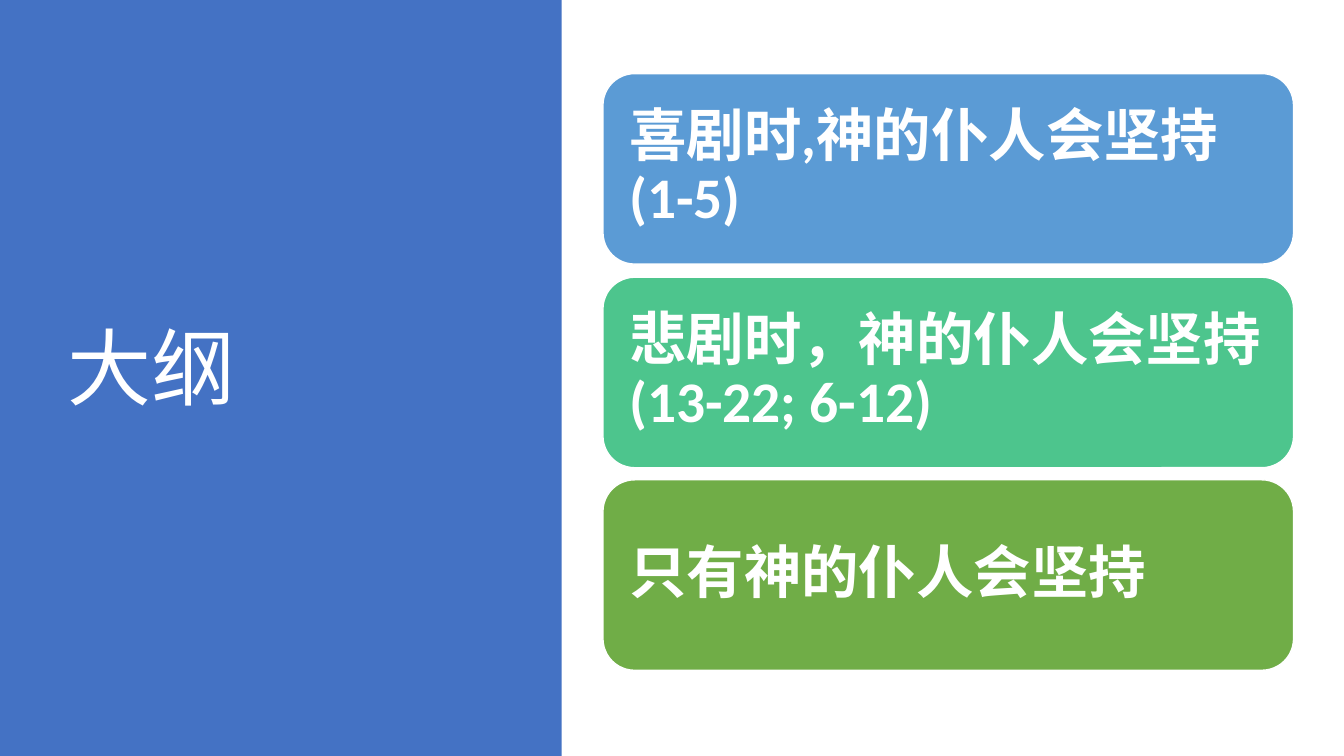
from dataclasses import dataclass

from pptx import Presentation
from pptx import util as u
from pptx.dml.color import RGBColor
from pptx.enum import lang, shapes, text

PX = 9144


@dataclass(frozen=True)
class Theme:
    """Colours, font and type sizes of the slide."""
    font: str = "Calibri"
    white: str = "FFFFFF"
    panel: str = "4472C4"
    cards: tuple = ("5B9BD5", "4DC58D", "70AD47")
    title_size: int = 60
    card_size: int = 41


THEME = Theme()
OUTLINE = (
    "喜剧时,神的仆人会坚持 (1-5)",
    "悲剧时，神的仆人会坚持 (13-22; 6-12)",
    "只有神的仆人会坚持",
)


def px(*lengths):
    """Turn px lengths into EMU."""
    return [u.Emu(n * PX) for n in lengths]


def put_text(sp, words, size, bold=False, inset=10, after=0):
    """Write one left-aligned, vertically centred paragraph into a shape."""
    tf = sp.text_frame
    tf.word_wrap = True
    tf.auto_size = text.MSO_AUTO_SIZE.NONE
    tf.vertical_anchor = text.MSO_ANCHOR.MIDDLE
    tf.margin_left, tf.margin_top, tf.margin_right, tf.margin_bottom = px(*[inset] * 4)
    p = tf.paragraphs[0]
    p.alignment = text.PP_ALIGN.LEFT
    p.line_spacing = 0.9
    p.space_after = u.Pt(after)
    r = p.add_run()
    r.text = words
    r.font.name = THEME.font
    r.font.size = u.Pt(size)
    r.font.bold = bold
    r.font.color.rgb = RGBColor.from_string(THEME.white)
    r.font.language_id = lang.MSO_LANGUAGE_ID.SIMPLIFIED_CHINESE


def add_box(s, kind, box, fill, line=None):
    """Add a filled shape with an optional 1 pt outline."""
    sp = s.shapes.add_shape(kind, *px(*box))
    sp.shadow.inherit = False
    sp.fill.solid()
    sp.fill.fore_color.rgb = RGBColor.from_string(fill)
    if line:
        sp.line.color.rgb = RGBColor.from_string(line)
        sp.line.width = u.Pt(1)
    else:
        sp.line.fill.background()
    return sp


def title_panel(s, box):
    """Fill the box with colour and set the slide title on it."""
    x, y, w, h = box
    panel = add_box(s, shapes.MSO_SHAPE.RECTANGLE, box, THEME.panel)
    title = s.shapes.title
    title.element.addprevious(panel.element)
    title.left, title.top, title.width, title.height = px(x + 57, y + 68, w - 141, h - 148)
    put_text(title, "大纲", THEME.title_size, inset=10)


def outline_cards(s, box, gap=13):
    """Stack one rounded card per outline point in the box."""
    x, y, w, h = box
    pitch = (h + gap) / len(OUTLINE)
    for i, (words, fill) in enumerate(zip(OUTLINE, THEME.cards)):
        card = (x, round(y + i * pitch), w, round(pitch - gap))
        sp = add_box(s, shapes.MSO_SHAPE.ROUNDED_RECTANGLE, card, fill, THEME.white)
        put_text(sp, words, THEME.card_size, bold=True, inset=17, after=14)


def main():
    """Build and save the outline slide."""
    prs = Presentation()
    prs.slide_width, prs.slide_height = px(1333, 750)
    s = prs.slides.add_slide(prs.slide_layouts[5])
    title_panel(s, (0, 0, 557, 750))
    outline_cards(s, (598, 73, 685, 592))
    prs.save("out.pptx")


if __name__ == "__main__":
    main()
